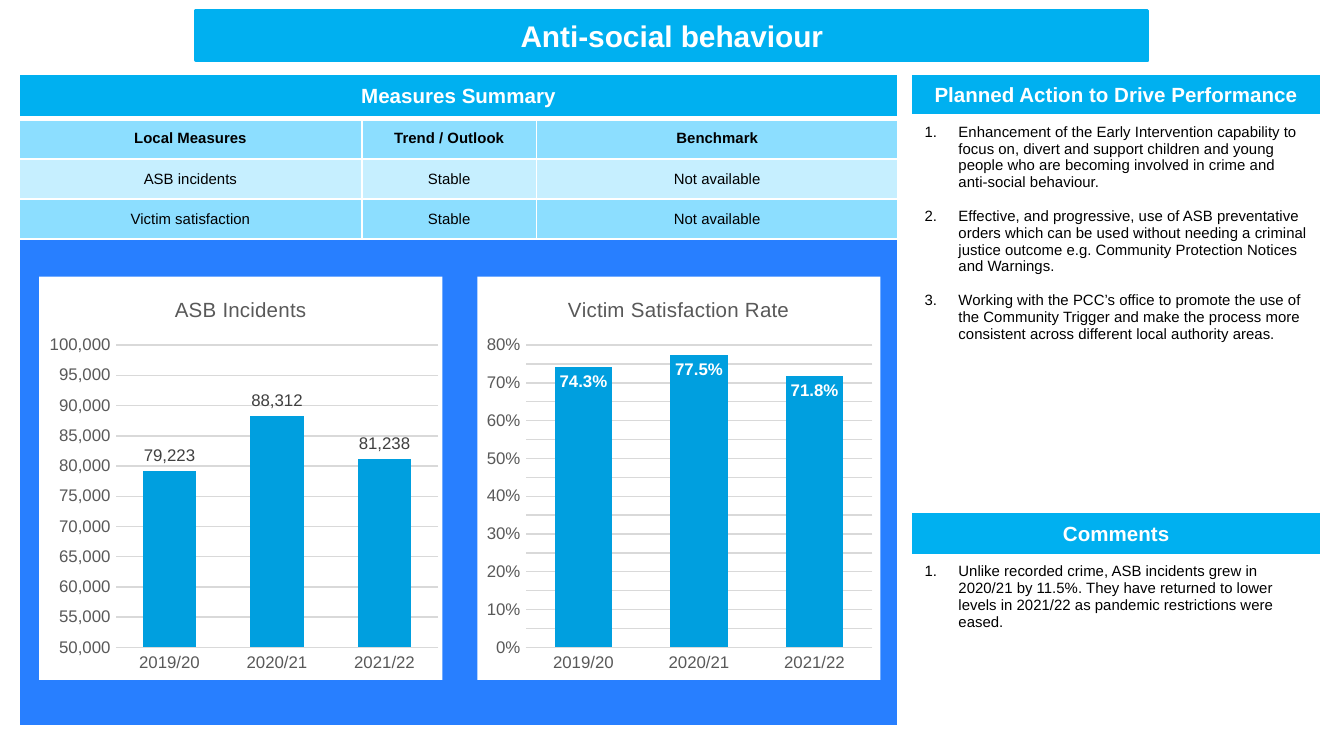
from lxml import etree
from pptx import Presentation
from pptx.chart.data import CategoryChartData
from pptx.dml.color import RGBColor
from pptx.enum.chart import XL_CHART_TYPE, XL_LABEL_POSITION, XL_TICK_MARK
from pptx.enum.shapes import MSO_SHAPE
from pptx.enum.text import MSO_ANCHOR, PP_ALIGN
from pptx.oxml import parse_xml
from pptx.oxml.ns import nsdecls, qn
from pptx.util import Cm, Pt

COLUMNS = XL_CHART_TYPE.COLUMN_CLUSTERED
OUTSIDE, INSIDE = XL_LABEL_POSITION.OUTSIDE_END, XL_LABEL_POSITION.INSIDE_END
NO_TICK = XL_TICK_MARK.NONE
RECTANGLE = MSO_SHAPE.RECTANGLE
MIDDLE, TOP = MSO_ANCHOR.MIDDLE, MSO_ANCHOR.TOP
CENTER = PP_ALIGN.CENTER

WHITE = RGBColor(0xFF, 0xFF, 0xFF)
BLACK = RGBColor(0x00, 0x00, 0x00)
SKY = RGBColor(0x00, 0xB0, 0xF0)
LIGHT = RGBColor(0x8C, 0xDE, 0xFF)
PALE = RGBColor(0xC6, 0xEF, 0xFF)
PANEL = RGBColor(0x28, 0x7F, 0xFF)
BAR = RGBColor(0x00, 0x9F, 0xDF)
GREY = RGBColor(0x59, 0x59, 0x59)
DARK_GREY = RGBColor(0x40, 0x40, 0x40)
GRID = RGBColor(0xD9, 0xD9, 0xD9)

YEARS = ["2019/20", "2020/21", "2021/22"]
MEASURES = [
    (["Local Measures", "Trend / Outlook", "Benchmark"], LIGHT, True),
    (["ASB incidents", "Stable", "Not available"], PALE, False),
    (["Victim satisfaction", "Stable", "Not available"], LIGHT, False),
]
ACTIONS = [
    "Enhancement of the Early Intervention capability to focus on, divert and support children "
    "and young people who are becoming involved in crime and anti-social behaviour.",
    "Effective, and progressive, use of ASB preventative orders which can be used without needing "
    "a criminal justice outcome e.g. Community Protection Notices and Warnings.",
    "Working with the PCC’s office to promote the use of the Community Trigger and make the "
    "process more consistent across different local authority areas.",
]
COMMENTS = [
    "Unlike recorded crime, ASB incidents grew in 2020/21 by 11.5%. They have returned to lower "
    "levels in 2021/22 as pandemic restrictions were eased.",
]


class Report:
    """Holds the slide and the style shared by its elements."""

    font_name = "Arial"

    def __init__(self, slide):
        self.slide = slide

    def style(self, font, size, color, bold=False):
        font.name, font.size, font.bold = self.font_name, Pt(size), bold
        font.color.rgb = color

    def banner(self, text, left, top, width, height):
        banner = self.slide.shapes.add_shape(RECTANGLE, Cm(left), Cm(top), Cm(width), Cm(height))
        banner.shadow.inherit = False
        banner.fill.solid()
        banner.fill.fore_color.rgb = SKY
        banner.line.color.rgb = SKY
        banner.line.width = Pt(2)
        frame = banner.text_frame
        frame.margin_left = frame.margin_right = frame.margin_top = frame.margin_bottom = 0
        frame.vertical_anchor = MIDDLE
        frame.text = text
        frame.paragraphs[0].alignment = CENTER
        self.style(frame.paragraphs[0].runs[0].font, 16, WHITE, True)

    def table(self, left, top, widths, heights):
        frame = self.slide.shapes.add_table(
            len(heights), len(widths), Cm(left), Cm(top), Cm(sum(widths)), Cm(sum(heights)))
        table = frame.table
        table.horz_banding = False
        for column, width in zip(table.columns, widths):
            column.width = Cm(width)
        for row, height in zip(table.rows, heights):
            row.height = Cm(height)
        for index, row in enumerate(table.rows):
            for cell in row.cells:
                self.borders(cell, top=3 if index == 1 else 1, bottom=3 if index == 0 else 1)
                cell.fill.background()
        return table

    def borders(self, cell, top, bottom):
        properties = cell._tc.get_or_add_tcPr()
        for side, points in (("L", 1), ("R", 1), ("T", top), ("B", bottom)):
            properties.append(parse_xml(
                f'<a:ln{side} {nsdecls("a")} w="{Pt(points)}"><a:solidFill>'
                f'<a:srgbClr val="{WHITE}"/></a:solidFill></a:ln{side}>'))

    def cell(self, cell, text, fill, size=8, color=BLACK, bold=False):
        cell.fill.solid()
        cell.fill.fore_color.rgb = fill
        cell.vertical_anchor = MIDDLE
        cell.text = text
        paragraph = cell.text_frame.paragraphs[0]
        paragraph.alignment = CENTER
        self.style(paragraph.font, size, color, bold)
        for run in paragraph.runs:
            self.style(run.font, size, color, bold)

    def heading(self, cell, text):
        self.cell(cell, text, SKY, 11, WHITE, True)

    def numbered_panel(self, heading, items, left, top, width, heights):
        table = self.table(left, top, [width], heights)
        self.heading(table.cell(0, 0), heading)
        body = table.cell(1, 0)
        body.vertical_anchor = TOP
        body.text = "\n".join(items)
        for index, paragraph in enumerate(body.text_frame.paragraphs):
            if index:
                paragraph.space_before = Pt(9)
            properties = paragraph._p.get_or_add_pPr()
            properties.set("marL", str(Cm(0.64)))
            properties.set("indent", str(-Cm(0.64)))
            numbering = etree.SubElement(properties, qn("a:buAutoNum"))
            numbering.set("type", "arabicPeriod")
            self.style(paragraph.runs[0].font, 8, BLACK)

    def column_chart(self, title, values, left, scale, axis_format, label_format,
                     label_position, label_color, label_bold, plot):
        """scale is (minimum, maximum, step); plot is the inner x, y, w, h as fractions."""
        data = CategoryChartData()
        data.categories = YEARS
        data.add_series(title, values)
        chart = self.slide.shapes.add_chart(
            COLUMNS, Cm(left), Cm(5.23), Cm(7.62), Cm(7.62), data).chart
        self.style(chart.font, 10, BLACK)
        chart.has_legend = False
        chart.has_title = True
        chart.chart_title.text_frame.text = title
        self.style(chart.chart_title.text_frame.paragraphs[0].runs[0].font, 11, GREY)
        chart.chart_title.include_in_layout = False

        years, amounts = chart.category_axis, chart.value_axis
        for axis in (years, amounts):
            axis.major_tick_mark = axis.minor_tick_mark = NO_TICK
            self.style(axis.tick_labels.font, 9, GREY)
        amounts.minimum_scale, amounts.maximum_scale, amounts.major_unit = scale
        amounts.tick_labels.number_format = axis_format
        amounts.tick_labels.number_format_is_linked = False
        amounts.format.line.fill.background()
        amounts.has_major_gridlines = True
        for line in (years.format.line, amounts.major_gridlines.format.line):
            line.color.rgb = GRID
            line.width = Pt(0.75)

        bars = chart.plots[0]
        bars.vary_by_categories = False
        bars.gap_width, bars.overlap = 100, -27
        fill = bars.series[0].format.fill
        fill.solid()
        fill.fore_color.rgb = BAR
        bars.has_data_labels = True
        labels = bars.data_labels
        labels.show_value = True
        labels.position = label_position
        labels.number_format = label_format
        labels.number_format_is_linked = False
        self.style(labels.font, 9, label_color, label_bold)
        self.chart_area(chart, plot)

    def chart_area(self, chart, plot):
        """Fill the chart white and fix the inner plot area."""
        chart_element = chart._chartSpace.find(qn("c:chart"))
        chart_element.addnext(parse_xml(
            f'<c:spPr {nsdecls("c", "a")}><a:solidFill><a:srgbClr val="{WHITE}"/></a:solidFill>'
            '<a:ln><a:noFill/></a:ln></c:spPr>'))
        plot_area = chart_element.find(qn("c:plotArea"))
        for layout in plot_area.findall(qn("c:layout")):
            plot_area.remove(layout)
        sizes = "".join(f'<c:{name} val="{value}"/>' for name, value in zip("xywh", plot))
        plot_area.insert(0, parse_xml(
            f'<c:layout {nsdecls("c")}><c:manualLayout><c:layoutTarget val="inner"/>'
            f'<c:xMode val="edge"/><c:yMode val="edge"/>{sizes}</c:manualLayout></c:layout>'))


def main():
    presentation = Presentation()
    presentation.slide_width, presentation.slide_height = Cm(25.4), Cm(14.29)
    report = Report(presentation.slides.add_slide(presentation.slide_layouts[6]))

    summary = report.table(0.36, 1.4, [6.48, 3.3, 6.83], [0.84, 0.76, 0.76, 0.76, 9.19])
    for row in (0, 4):
        summary.cell(row, 0).merge(summary.cell(row, 2))
    report.heading(summary.cell(0, 0), "Measures Summary")
    for row, (texts, fill, bold) in enumerate(MEASURES, 1):
        for column, text in enumerate(texts):
            report.cell(summary.cell(row, column), text, fill, bold=bold)
    report.cell(summary.cell(4, 0), "", PANEL)

    report.banner("Anti-social behaviour", 3.71, 0.2, 17.98, 0.94)
    report.numbered_panel("Planned Action to Drive Performance", ACTIONS,
                          17.22, 1.4, 7.75, [0.81, 7.47])
    report.numbered_panel("Comments", COMMENTS, 17.22, 9.68, 7.75, [0.84, 2.69])

    report.column_chart("ASB Incidents", [79223, 88312, 81238], 0.74, (50000, 100000, 5000),
                        "#,##0", "#,##0", OUTSIDE, DARK_GREY, False, (0.19, 0.17, 0.8, 0.75))
    report.column_chart("Victim Satisfaction Rate", [0.743, 0.775, 0.718], 9.02, (0, 0.8, 0.05),
                        "0%", "0.0%", INSIDE, WHITE, True, (0.12, 0.17, 0.86, 0.75))
    presentation.save("out.pptx")


if __name__ == "__main__":
    main()
